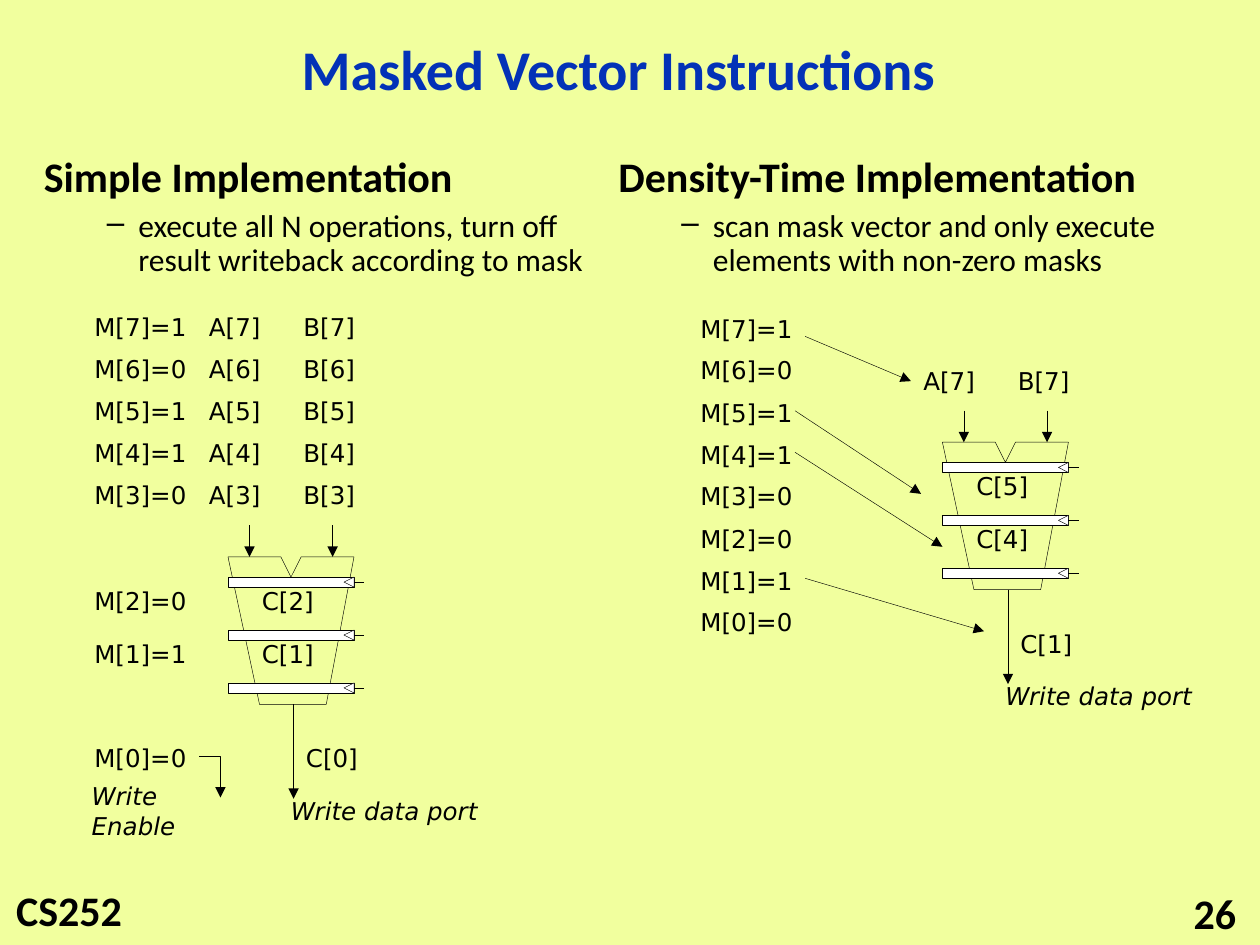
from dataclasses import dataclass

from lxml import etree
from pptx import Presentation
from pptx import util as u
from pptx.dml import color as c
from pptx.enum import shapes, text
from pptx.oxml import ns

I = u.Inches


@dataclass(frozen=True)
class Theme:
    """Colours, type styles and line width of the slide."""
    back: str = "F1FF9E"
    ink: str = "000000"
    blue: str = "0332B7"
    white: str = "FFFFFF"
    line: float = 0.25

    def font(self, kind):
        """Return the font values for one kind of text."""
        return {
            "title": dict(name="Calibri", size=u.Pt(32), bold=True),
            "head": dict(name="Calibri", size=u.Pt(24), bold=True),
            "body": dict(name="Calibri", size=u.Pt(18), bold=False),
            "label": dict(name="DejaVu Sans", size=u.Pt(14)),
            "port": dict(name="DejaVu Sans", size=u.Pt(14), italic=True),
        }[kind]


T = Theme()


def rgb(hue):
    """Turn a hex string into a colour."""
    return c.RGBColor.from_string(hue)


def put(obj, vals):
    """Set each named value on an object."""
    for key, val in vals.items():
        setattr(obj, key, val)


def run(para, words, kind, hue=T.ink):
    """Add one styled run to a paragraph."""
    part = para.add_run()
    part.text = words
    put(part.font, T.font(kind))
    part.font.color.rgb = rgb(hue)


def note(area, words, box, kind="label", hue=T.ink, **para):
    """Place one line of text in a box and return it."""
    shape = area.add_textbox(*map(I, box))
    put(shape.text_frame, dict(word_wrap=kind == "title",
                               vertical_anchor=text.MSO_ANCHOR.MIDDLE))
    line = shape.text_frame.paragraphs[0]
    put(line, para)
    run(line, words, kind, hue)
    return shape


def ink(shape, fill=None, head=False):
    """Give a shape or connector its thin line, fill and arrowhead."""
    shape.line.width = u.Pt(T.line)
    shape.line.fill.solid()
    shape.line.fill.fore_color.rgb = rgb(T.ink)
    if head:
        etree.SubElement(shape.line._get_or_add_ln(), ns.qn("a:tailEnd"), type="triangle")
    if hasattr(shape, "begin_x"):
        etree.SubElement(shape._element.spPr, ns.qn("a:effectLst"))
        return shape
    shape.shadow.inherit = False
    if fill:
        shape.fill.solid()
        shape.fill.fore_color.rgb = rgb(fill)
    else:
        shape.fill.background()
    return shape


def wire(area, x1, y1, x2, y2, head=True):
    """Draw a straight line, with an arrowhead by default."""
    kind = shapes.MSO_CONNECTOR.STRAIGHT
    return ink(area.add_connector(kind, I(x1), I(y1), I(x2), I(y2)), head=head)


def path(area, pts, close=True, fill=None, head=False):
    """Draw an outline through points given in inches."""
    spots = [(I(x), I(y)) for x, y in pts]
    pen = area.build_freeform(*spots[0])
    pen.add_line_segments(spots[1:], close=close)
    return ink(pen.convert_to_shape(), fill, head)


def latch(area, x, y):
    """Draw a pipeline register with its clock mark."""
    wide, high = 1, 0.08
    bar = ink(area.add_shape(shapes.MSO_SHAPE.RECTANGLE, I(x), I(y), I(wide), I(high)), T.white)
    end, mid = x + wide, y + high / 2
    path(area, [(end, y + high), (end - high, mid), (end, y)], fill=T.white)
    wire(area, end, mid, end + high, mid, head=False).begin_connect(bar, 3)


def pair(area, x, y, num):
    """Place the two operand labels and return the first."""
    first = note(area, f"A[{num}]", (x, y, 0.63, 0.33))
    note(area, f"B[{num}]", (x + 0.75, y, 0.64, 0.33))
    return first


def unit(area, x, y, nums):
    """Draw the pipelined unit with its stages, inputs and output."""
    edge = [(0, 0), (0.25, 1.17), (0.78, 1.17), (1, 0), (0.58, 0), (0.5, 0.16), (0.42, 0)]
    path(area, [(x + dx, y + dy) for dx, dy in edge])
    for row in range(3):
        latch(area, x, y + 0.16 + 0.42 * row)
    for num, (dx, dy) in zip(nums, [(0.17, 0.18), (0.17, 0.6), (0.52, 1.43)]):
        note(area, f"C[{num}]", (x + dx, y + dy, 0.64, 0.33))
    for dx in (0.17, 0.83):
        wire(area, x + dx, y - 0.25, x + dx, y)
    wire(area, x + 0.52, y + 1.17, x + 0.52, y + 1.92)
    note(area, "Write data port", (x + 0.4, y + 1.85, 1.69, 0.33), "port")


def mask(area, x, y, num, bit):
    """Place one mask bit label."""
    note(area, f"M[{num}]={bit}", (x, y, 0.95, 0.33))


def head(area, box, title, point):
    """Write a heading with one dashed point below it."""
    frame = area.add_textbox(*map(I, box)).text_frame
    put(frame, dict(word_wrap=True, vertical_anchor=text.MSO_ANCHOR.MIDDLE))
    rows = [(frame.paragraphs[0], title, "head", 0.31, 0.31, 7.2, None),
            (frame.add_paragraph(), point, "body", 0.75, 0.25, 5.4, "–")]
    for para, words, kind, left, hang, gap, dash in rows:
        put(para, dict(line_spacing=0.9, space_before=u.Pt(gap), level=int(bool(dash))))
        props = para._p.get_or_add_pPr()
        props.set("marL", str(I(left)))
        props.set("indent", str(-I(hang)))
        if dash:
            etree.SubElement(props, ns.qn("a:buChar"), char=dash)
        run(para, words, kind)


def dense(area, x, y, bits):
    """Build the density-time side."""
    head(area, (x, y, 5.17, 1.11), "Density-Time Implementation",
         "scan mask vector and only execute elements with non-zero masks")
    for row, bit in enumerate(bits):
        mask(area, x + 0.65, y + 1.27 + row / 3, 7 - row, bit)
    left, top = x + 2.67, y + 2.34
    unit(area, left, top, (5, 4, 1))
    first = pair(area, left - 0.25, top - 0.65, 7)
    wire(area, x + 1.58, y + 1.5, x + 2.42, y + 1.84).end_connect(first, 1)
    for x1, y1, x2, y2 in [(1.5, 2.09, 2.5, 2.75), (1.5, 2.42, 2.67, 3.17),
                           (1.58, 3.42, 3, 3.84)]:
        wire(area, x + x1, y + y1, x + x2, y + y2)


def plain(area, x, y, bits):
    """Build the simple side."""
    head(area, (x, y, 4.83, 1.11), "Simple Implementation",
         "execute all N operations, turn off result writeback according to mask")
    left, top = x + 1.56, y + 3.25
    unit(area, left, top, (2, 1, 0))
    rows = [y + 1.26 + row / 3 for row in range(5)]
    for row, spot in enumerate(rows):
        pair(area, left - 0.25, spot, 7 - row)
    rows += [top + 0.18, top + 0.6, top + 1.43]
    for row, (spot, bit) in enumerate(zip(rows, bits)):
        mask(area, x + 0.4, spot, 7 - row, bit)
    path(area, [(x + 1.33, y + 4.83), (x + 1.5, y + 4.83), (x + 1.5, y + 5.16)],
         close=False, head=True)
    note(area, "Write Enable", (x + 0.38, top + 1.85, 1.44, 0.33), "port")


def frame(area):
    """Write the title, course and page number."""
    note(area, "Masked Vector Instructions", (0.92, 0.17, 7.98, 0.81), "title", T.blue,
         alignment=text.PP_ALIGN.CENTER, line_spacing=0.9)
    note(area, "CS252", (0.03, 6.97, 1.05, 0.5), "head")
    note(area, "26", (7.83, 7.08, 2.08, 0.32), "head", alignment=text.PP_ALIGN.RIGHT)


def main():
    """Build the slide and save it."""
    deck = Presentation()
    put(deck, dict(slide_width=I(10), slide_height=I(7.5)))
    slide = deck.slides.add_slide(deck.slide_layouts[6])
    slide.background.fill.solid()
    slide.background.fill.fore_color.rgb = rgb(T.back)
    frame(slide.shapes)
    bits = (1, 0, 1, 1, 0, 0, 1, 0)
    dense(slide.shapes.add_group_shape().shapes, 4.81, 1.17, bits)
    plain(slide.shapes.add_group_shape().shapes, 0.25, 1.17, bits)
    deck.save("out.pptx")


if __name__ == "__main__":
    main()
